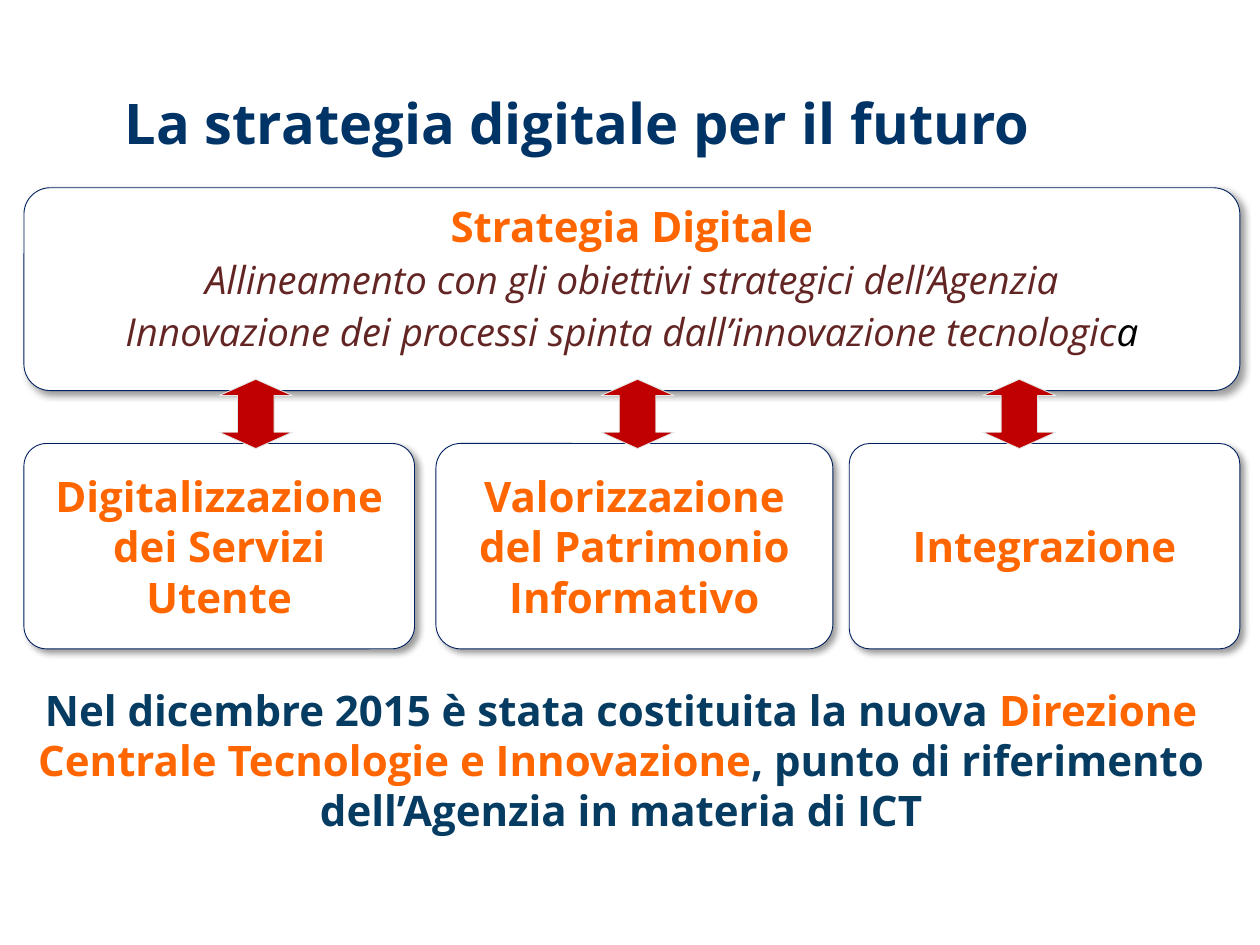
from dataclasses import dataclass

from lxml import etree
from pptx import Presentation
from pptx import util as u
from pptx.dml.color import RGBColor
from pptx.enum import shapes, text
from pptx.oxml import ns

FONT = "Open Sans"
ORANGE, NAVY, BROWN = "FF6600", "073C62", "632523"


@dataclass
class Pillar:
    label: str
    left: float
    width: float
    corner: float
    inset: float = 0.04


PILLARS = [
    Pillar("Digitalizzazione dei Servizi Utente", 0.19, 3.1, 0.11),
    Pillar("Valorizzazione del Patrimonio Informativo", 3.46, 3.15, 0.12),
    Pillar("Integrazione", 6.74, 3.1, 0.1, 0.02),
]


def rgb(color: str) -> RGBColor:
    return RGBColor.from_string(color)


def place(s, left: float, top: float, width: float, height: float) -> None:
    s.left, s.top = u.Inches(left), u.Inches(top)
    s.width, s.height = u.Inches(width), u.Inches(height)


def set_insets(tf, side: float, vertical: float) -> None:
    tf.word_wrap = True
    tf.margin_left = tf.margin_right = u.Inches(side)
    tf.margin_top = tf.margin_bottom = u.Inches(vertical)


def write(p, runs: list[tuple[str, str]], size: int, bold: bool = True,
          italic: bool = False, align=text.PP_ALIGN.CENTER) -> None:
    p.alignment = align
    p.font.name, p.font.size = FONT, u.Pt(size)
    p.font.bold, p.font.italic = bold, italic
    for words, color in runs:
        r = p.add_run()
        r.text = words
        r.font.color.rgb = rgb(color)


def add_filled(slide, kind, box: tuple[float, ...], fill: str, line: str):
    s = slide.shapes.add_shape(kind, *map(u.Inches, box))
    s.shadow.inherit = False
    s.fill.solid()
    s.fill.fore_color.rgb = rgb(fill)
    s.line.color.rgb = rgb(line)
    s.line.width = u.Pt(0.5)
    return s


def add_shadow(s) -> None:
    effects = s._element.spPr.find(ns.qn("a:effectLst"))
    shadow = etree.SubElement(
        effects, ns.qn("a:outerShdw"), blurRad=str(u.Pt(4)),
        dist=str(u.Pt(3)), dir="2700000", algn="tl", rotWithShape="0")
    color = etree.SubElement(shadow, ns.qn("a:srgbClr"), val="000000")
    etree.SubElement(color, ns.qn("a:alpha"), val="40000")


def add_panel(slide, box: tuple[float, ...], corner: float, inset: float, anchor):
    s = add_filled(slide, shapes.MSO_SHAPE.ROUNDED_RECTANGLE, box, "FFFFFF", "002060")
    s.adjustments[0] = corner
    add_shadow(s)
    tf = s.text_frame
    set_insets(tf, inset, 0.04)
    tf.vertical_anchor = anchor
    return tf


def add_strategy(slide) -> None:
    tf = add_panel(slide, (0.19, 1.49, 9.65, 1.61), 0.13, 0, text.MSO_ANCHOR.TOP)
    write(tf.paragraphs[0], [("Strategia Digitale", ORANGE)], 24)
    for runs in (
        [("Allineamento con gli obiettivi strategici dell’Agenzia", BROWN)],
        [("Innovazione dei processi spinta dall’innovazione tecnologic", BROWN),
         ("a", "000000")],
    ):
        write(tf.add_paragraph(), runs, 22, bold=False, italic=True)
    for p in tf.paragraphs:
        p.space_after = u.Pt(3)


def add_pillar(slide, pillar: Pillar) -> None:
    tf = add_panel(slide, (pillar.left, 3.52, pillar.width, 1.63),
                   pillar.corner, pillar.inset, text.MSO_ANCHOR.MIDDLE)
    write(tf.paragraphs[0], [(pillar.label, ORANGE)], 24)


def add_arrow(slide, left: float) -> None:
    s = add_filled(slide, shapes.MSO_SHAPE.UP_DOWN_ARROW,
                   (left, 3.01, 0.58, 0.55), "C00000", "E4E7E7")
    geometry = s._element.spPr.find(ns.qn("a:prstGeom"))
    guides = geometry.find(ns.qn("a:avLst"))
    for guide in list(guides):
        guides.remove(guide)
    for name, value in (("adj1", 50000), ("adj2", 23500)):
        etree.SubElement(guides, ns.qn("a:gd"), name=name, fmla=f"val {value}")


def add_closing(slide) -> None:
    s = slide.shapes.add_textbox(*map(u.Inches, (0.23, 5.43, 9.4, 1.21)))
    set_insets(s.text_frame, 0, 0)
    write(s.text_frame.paragraphs[0], [
        ("Nel dicembre 2015 è stata costituita la nuova ", NAVY),
        ("Direzione Centrale Tecnologie e Innovazione", ORANGE),
        (", punto di riferimento dell’Agenzia in materia di ICT", NAVY),
    ], 24)


def add_title(slide) -> None:
    s = slide.shapes.title
    place(s, 0.89, 0.65, 8.36, 0.64)
    tf = s.text_frame
    set_insets(tf, 0.1, 0.05)
    tf.auto_size = text.MSO_AUTO_SIZE.NONE
    tf.vertical_anchor = text.MSO_ANCHOR.TOP
    write(tf.paragraphs[0], [("La strategia digitale per il futuro", "003366")],
          32, align=text.PP_ALIGN.LEFT)


def main() -> None:
    prs = Presentation()
    prs.slide_width, prs.slide_height = u.Inches(10), u.Inches(7.5)
    slide = prs.slides.add_slide(prs.slide_layouts[5])
    add_title(slide)
    add_strategy(slide)
    for pillar in PILLARS:
        add_pillar(slide, pillar)
    for i in range(len(PILLARS)):
        add_arrow(slide, 1.74 + 3.03 * i)
    add_closing(slide)
    prs.save("out.pptx")


if __name__ == "__main__":
    main()
